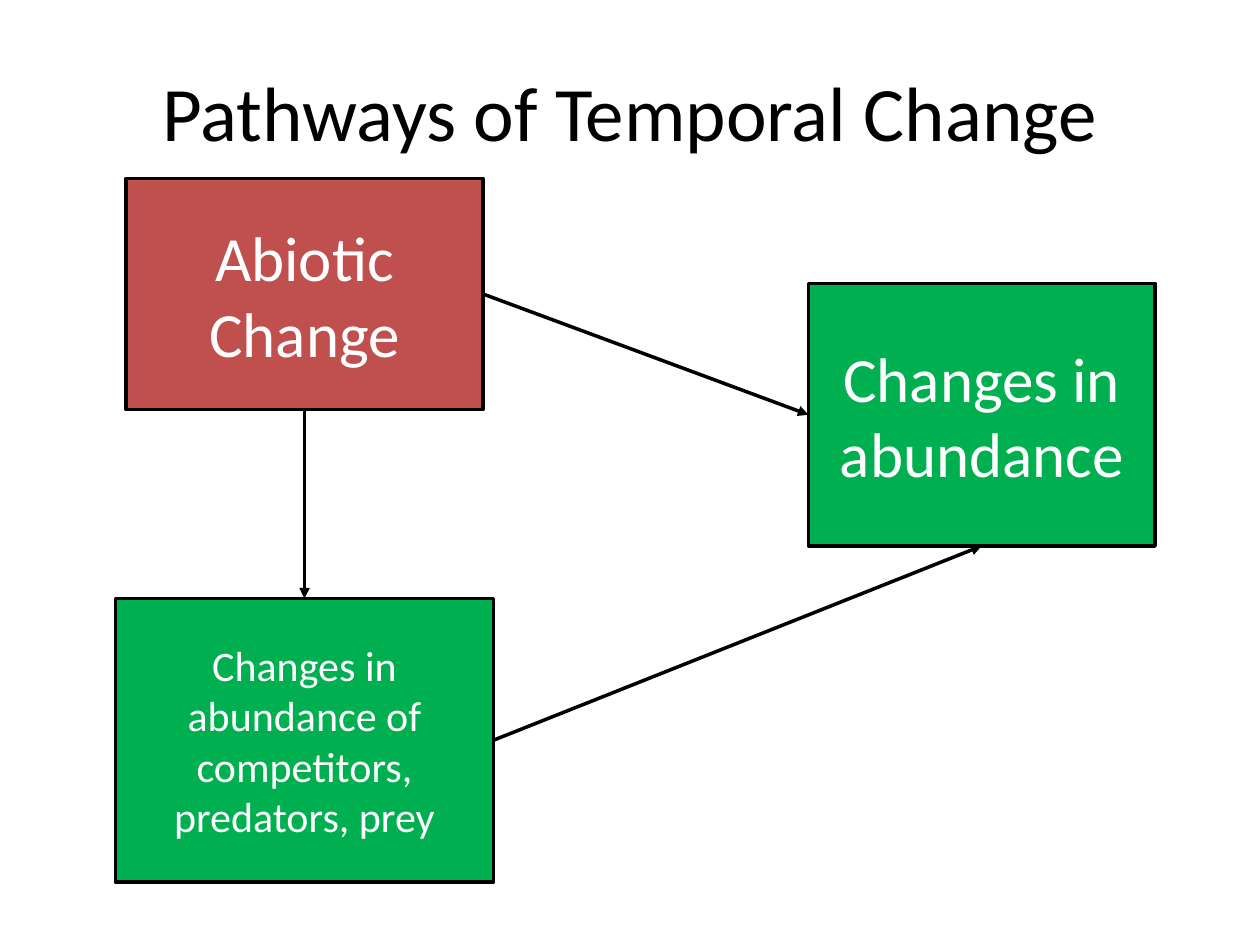
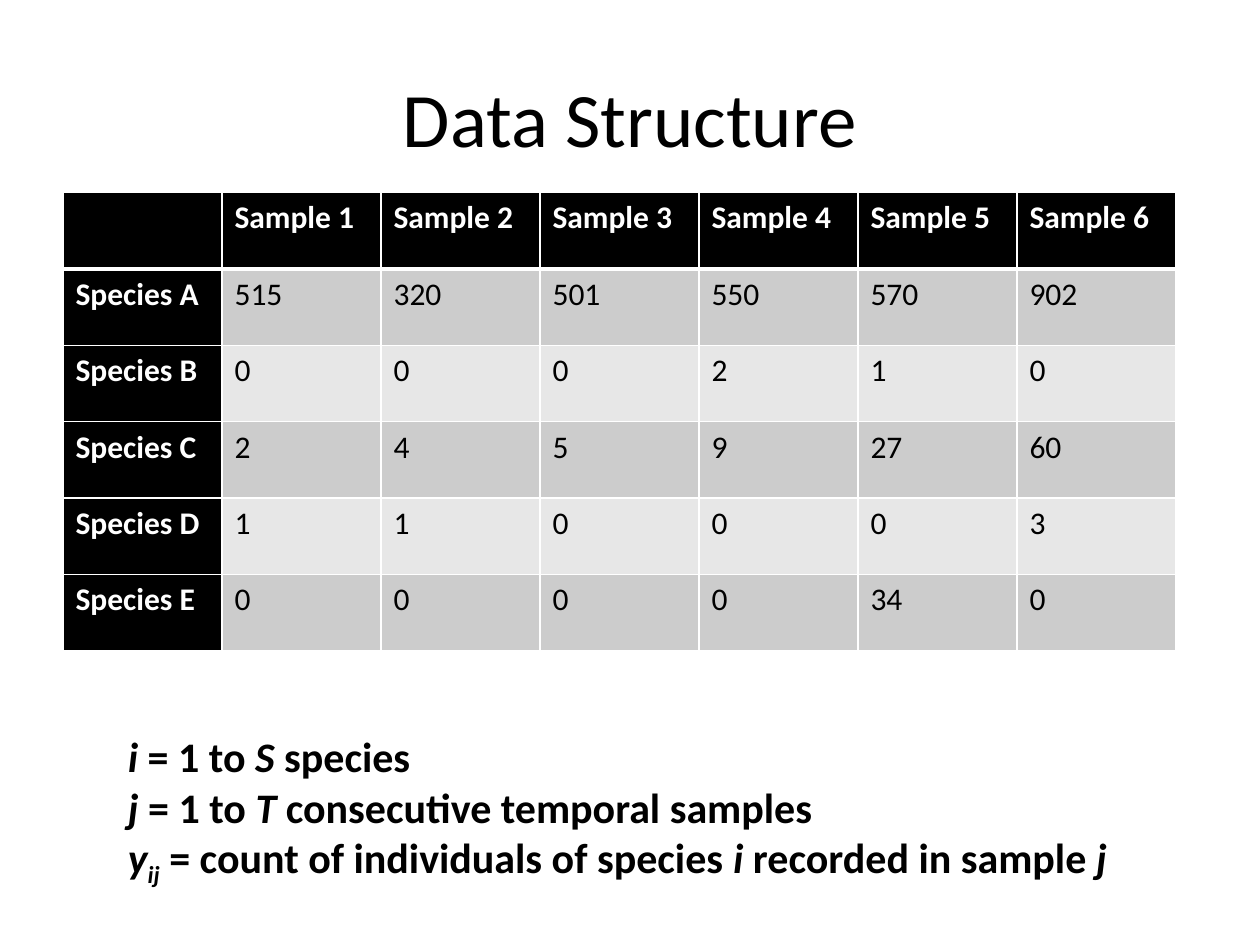
from lxml.etree import SubElement
from pptx import Presentation
from pptx.dml.color import RGBColor
from pptx.enum.shapes import MSO_CONNECTOR, MSO_SHAPE
from pptx.enum.text import MSO_ANCHOR, PP_ALIGN
from pptx.oxml.ns import qn
from pptx.util import Pt

BLACK = RGBColor(0, 0, 0)
WHITE = RGBColor(255, 255, 255)
RED = RGBColor(0xC0, 0x50, 0x4D)
GREEN = RGBColor(0x00, 0xB0, 0x50)
BANDS = RGBColor(0xE7, 0xE7, 0xE7), RGBColor(0xCC, 0xCC, 0xCC)

TOP, LEFT, BOTTOM, RIGHT = range(4)  # connection sites of a box

COUNTS = {
    "Species A": [515, 320, 501, 550, 570, 902],
    "Species B": [0, 0, 0, 2, 1, 0],
    "Species C": [2, 4, 5, 9, 27, 60],
    "Species D": [1, 1, 0, 0, 0, 3],
    "Species E": [0, 0, 0, 0, 34, 0],
}

# Each line is a list of (text, style): i = italic, s = italic subscript
NOTES = [
    [("i", "i"), (" = 1 to ", ""), ("S", "i"), (" species", "")],
    [("j", "i"), (" = 1 to ", ""), ("T", "i"),
     (" consecutive temporal samples", "")],
    [("y", "i"), ("ij", "s"), (" = count of individuals of species ", ""),
     ("i", "i"), (" recorded in sample ", ""), ("j", "i")],
]


class Deck:
    font = "Calibri"
    stroke = Pt(2)

    def __init__(self):
        self.show = Presentation()
        self.show.slide_width = Pt(720)
        self.show.slide_height = Pt(540)

    def start(self, title, top):
        """Add a slide with its title and make it the current one."""
        self.slide = self.show.slides.add_slide(self.show.slide_layouts[6])
        frame = self.frame(36, top, 648, 90)
        frame.vertical_anchor = MSO_ANCHOR.MIDDLE
        self.fill(frame, title, 44, BLACK, align=PP_ALIGN.CENTER)

    def frame(self, *place):
        box = self.slide.shapes.add_textbox(*map(Pt, place))
        box.text_frame.word_wrap = True
        return box.text_frame

    def style(self, run, size, color, bold=False):
        font = run.font
        font.name, font.size, font.bold = self.font, Pt(size), bold
        font.color.rgb = color

    def fill(self, frame, text, size, color, bold=False, align=None):
        frame.text = text
        para = frame.paragraphs[0]
        para.alignment = align
        for run in para.runs:
            self.style(run, size, color, bold)

    def box(self, text, size, color, *place):
        shape = self.slide.shapes.add_shape(
            MSO_SHAPE.FLOWCHART_PROCESS, *map(Pt, place))
        shape.shadow.inherit = False
        shape.fill.solid()
        shape.fill.fore_color.rgb = color
        shape.line.color.rgb = BLACK
        shape.line.width = self.stroke
        shape.text_frame.vertical_anchor = MSO_ANCHOR.MIDDLE
        self.fill(shape.text_frame, text, size, WHITE, align=PP_ALIGN.CENTER)
        return shape

    def arrow(self, source, out, target, into):
        """Link two boxes between the given connection sites."""
        link = self.slide.shapes.add_connector(
            MSO_CONNECTOR.STRAIGHT, 0, 0, 0, 0)
        link.begin_connect(source, out)
        link.end_connect(target, into)
        link.line.color.rgb = BLACK
        link.line.width = self.stroke
        SubElement(link.get_or_add_ln(), qn("a:tailEnd"), type="triangle")
        SubElement(link.element.spPr, qn("a:effectLst"))

    def cell(self, cell, text, fill, ink, bold, edges):
        """Fill a cell; edges maps each side to a line width in points."""
        props = cell._tc.get_or_add_tcPr()
        for side, width in edges.items():
            edge = SubElement(props, qn("a:ln" + side), w=str(Pt(width)))
            solid = SubElement(edge, qn("a:solidFill"))
            SubElement(solid, qn("a:srgbClr"), val=str(WHITE))
        cell.fill.solid()
        cell.fill.fore_color.rgb = fill
        self.fill(cell.text_frame, text, 18, ink, bold)

    def table(self, rows, left, top, width, height):
        table = self.slide.shapes.add_table(
            len(rows), len(rows[0]), *map(Pt, (left, top, width, height))).table
        for col in table.columns:
            col.width = Pt(width / len(rows[0]))
        for row in table.rows:
            row.height = Pt(height / len(rows))
        for r, row in enumerate(rows):
            edges = {"L": 1, "R": 1, "T": 3 if r == 1 else 1,
                     "B": 3 if r == 0 else 1}
            for c, value in enumerate(row):
                head = r == 0 or c == 0
                self.cell(table.cell(r, c), str(value),
                          BLACK if head else BANDS[r % 2],
                          WHITE if head else BLACK, head, edges)

    def notes(self, lines, *place):
        frame = self.frame(*place)
        for n, line in enumerate(lines):
            para = frame.add_paragraph() if n else frame.paragraphs[0]
            for text, kind in line:
                run = para.add_run()
                run.text = text
                self.style(run, 24, BLACK, bold=True)
                run.font.italic = bool(kind)
                if kind == "s":
                    run.font._element.set("baseline", "-25000")


def main():
    deck = Deck()

    deck.start("Pathways of Temporal Change", 18)
    cause = deck.box("Abiotic Change", 36, RED, 72, 102, 204, 132)
    result = deck.box("Changes in abundance", 36, GREEN, 462, 162, 198, 150)
    rivals = deck.box("Changes in abundance of competitors, predators, prey",
                      24, GREEN, 66, 342, 216, 162)
    deck.arrow(cause, RIGHT, result, LEFT)
    deck.arrow(cause, BOTTOM, rivals, TOP)
    deck.arrow(rivals, RIGHT, result, BOTTOM)

    deck.start("Data Structure", 21.6)
    head = [""] + [f"Sample {n}" for n in range(1, 7)]
    body = [[name, *counts] for name, counts in COUNTS.items()]
    deck.table([head, *body], 36, 110, 636, 262)
    deck.notes(NOTES, 66, 414, 588, 94)

    deck.show.save("out.pptx")


if __name__ == "__main__":
    main()
